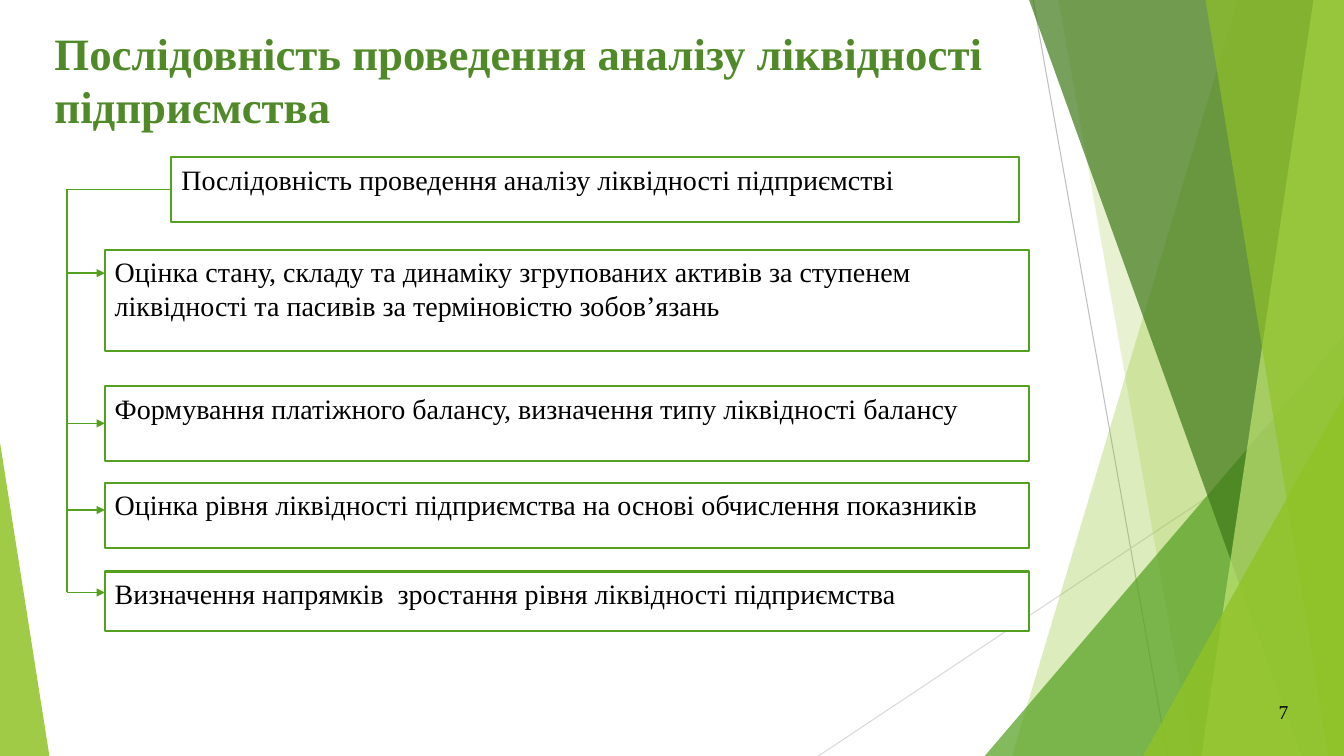
"""Build the slide on the steps of a company liquidity analysis."""
from lxml.etree import SubElement
from pptx import Presentation
from pptx.dml.color import RGBColor
from pptx.enum.shapes import MSO_CONNECTOR, MSO_SHAPE
from pptx.enum.text import MSO_ANCHOR, MSO_AUTO_SIZE, PP_ALIGN
from pptx.oxml.ns import qn
from pptx.util import Pt

WIDTH, HEIGHT = 960, 540
FONT = "Times New Roman"
GREEN, LIME, DARK, PALE = "54A021", "90C226", "3F7819", "C0E474"
WHITE, BLACK = "FFFFFF", "000000"

TITLE = "Послідовність проведення аналізу ліквідності підприємства"
PAGE_NUMBER = "7"
HEADER = ("Послідовність проведення аналізу ліквідності підприємстві", 122.4, 112.3, 605.5, 46.1)
STEP_LEFT, STEP_WIDTH = 74.9, 660.2
MIDDLE = None
STEPS = [
    ("Оцінка стану, складу та динаміку згрупованих активів за ступенем "
     "ліквідності та пасивів за терміновістю зобов’язань", 178.6, 72, 195.1),
    ("Формування платіжного балансу, визначення типу ліквідності балансу", 275.8, 53.3, MIDDLE),
    ("Оцінка рівня ліквідності підприємства на основі обчислення показників", 344.9, 46.8, 364.3),
    ("Визначення напрямків  зростання рівня ліквідності підприємства", 408.2, 42.5, 423.2),
]
TRUNK_X = 47.8

RAYS = [((738, 0), (834, HEIGHT), "BFBFBF"), ((WIDTH, 290.2), (584.6, HEIGHT), "D9D9D9")]
BACK_BANDS = [(884.2, 722.9, LIME, 30), (756, 851.8, LIME, 20)]
FRONT_BANDS = [(735.1, 929.5, DARK, 70), (938.2, 858.2, PALE, 70), (861.1, 949, LIME, 65)]
MIDDLE_TRIANGLE = (703.4, 239.8, 256.6, 1, GREEN, 72)
FRONT_TRIANGLES = [(816.5, 283, 143.5, 1, LIME, 80), (0, 316.1, 35.3, 0, LIME, 85)]


def rgb(value):
    return RGBColor.from_string(value)


def paint(shape, color, opacity=100):
    shape.shadow.inherit = False
    shape.fill.solid()
    shape.fill.fore_color.rgb = rgb(color)
    shape.line.fill.background()
    if opacity < 100:
        tint = shape.fill._xPr.find(qn("a:solidFill"))[0]
        SubElement(tint, qn("a:alpha"), val=str(opacity * 1000))


def add_band(slide, top_x, bottom_x, color, opacity):
    builder = slide.shapes.build_freeform(Pt(top_x), 0)
    corners = [(WIDTH, 0), (WIDTH, HEIGHT), (bottom_x, HEIGHT)]
    builder.add_line_segments([(Pt(x), Pt(y)) for x, y in corners])
    paint(builder.convert_to_shape(), color, opacity)


def add_triangle(slide, left, top, width, apex, color, opacity):
    triangle = slide.shapes.add_shape(
        MSO_SHAPE.ISOSCELES_TRIANGLE, Pt(left), Pt(top), Pt(width), Pt(HEIGHT - top))
    triangle.adjustments[0] = apex
    paint(triangle, color, opacity)


def add_line(slide, start, end, color=GREEN, weight=1, arrow=False):
    line = slide.shapes.add_connector(
        MSO_CONNECTOR.STRAIGHT, *(Pt(value) for value in (*start, *end)))
    line.line.color.rgb = rgb(color)
    line.line.width = Pt(weight)
    if arrow:
        SubElement(line.line._get_or_add_ln(), qn("a:tailEnd"), type="triangle")
    SubElement(line._element.spPr, qn("a:effectLst"))
    return line


def write(shape, text, size, color=BLACK, bold=False, align=PP_ALIGN.LEFT, anchor=MSO_ANCHOR.TOP):
    frame = shape.text_frame
    frame.text = text
    frame.word_wrap = True
    frame.auto_size = MSO_AUTO_SIZE.NONE
    frame.vertical_anchor = anchor
    paragraph = frame.paragraphs[0]
    paragraph.alignment = align
    font = paragraph.runs[0].font
    font.name, font.size, font.bold = FONT, Pt(size), bold
    font.color.rgb = rgb(color)


def add_box(slide, text, left, top, width, height):
    box = slide.shapes.add_shape(
        MSO_SHAPE.RECTANGLE, Pt(left), Pt(top), Pt(width), Pt(height))
    paint(box, WHITE)
    box.line.color.rgb = rgb(GREEN)
    box.line.width = Pt(1.5)
    write(box, text, 20)
    return box


def draw_backdrop(slide):
    for start, end, color in RAYS:
        add_line(slide, start, end, color, 0.75)
    for band in BACK_BANDS:
        add_band(slide, *band)
    add_triangle(slide, *MIDDLE_TRIANGLE)
    for band in FRONT_BANDS:
        add_band(slide, *band)
    for triangle in FRONT_TRIANGLES:
        add_triangle(slide, *triangle)


def draw_sequence(slide):
    header = add_box(slide, *HEADER)
    _, header_left, header_top, _, header_height = HEADER
    trunk_top = header_top + header_height / 2
    add_line(slide, (TRUNK_X, trunk_top), (header_left, trunk_top)).end_connect(header, 1)
    for text, top, height, arrow_y in STEPS:
        step = add_box(slide, text, STEP_LEFT, top, STEP_WIDTH, height)
        y = top + height / 2 if arrow_y is MIDDLE else arrow_y
        branch = add_line(slide, (TRUNK_X, y), (STEP_LEFT, y), arrow=True)
        if arrow_y is MIDDLE:
            branch.end_connect(step, 1)
    add_line(slide, (TRUNK_X, trunk_top), (TRUNK_X, STEPS[-1][-1]))


def main():
    deck = Presentation()
    deck.slide_width, deck.slide_height = Pt(WIDTH), Pt(HEIGHT)
    slide = deck.slides.add_slide(deck.slide_layouts[5])
    draw_backdrop(slide)

    title = slide.shapes.title
    title.left, title.top, title.width, title.height = Pt(31.7), Pt(14.4), Pt(712.8), Pt(56.2)
    write(title, TITLE, 32, "508927", bold=True)

    number = slide.shapes.add_textbox(Pt(873.4), Pt(493.9), Pt(54), Pt(28.8))
    write(number, PAGE_NUMBER, 14, align=PP_ALIGN.RIGHT, anchor=MSO_ANCHOR.MIDDLE)

    draw_sequence(slide)
    deck.save("out.pptx")


if __name__ == "__main__":
    main()
